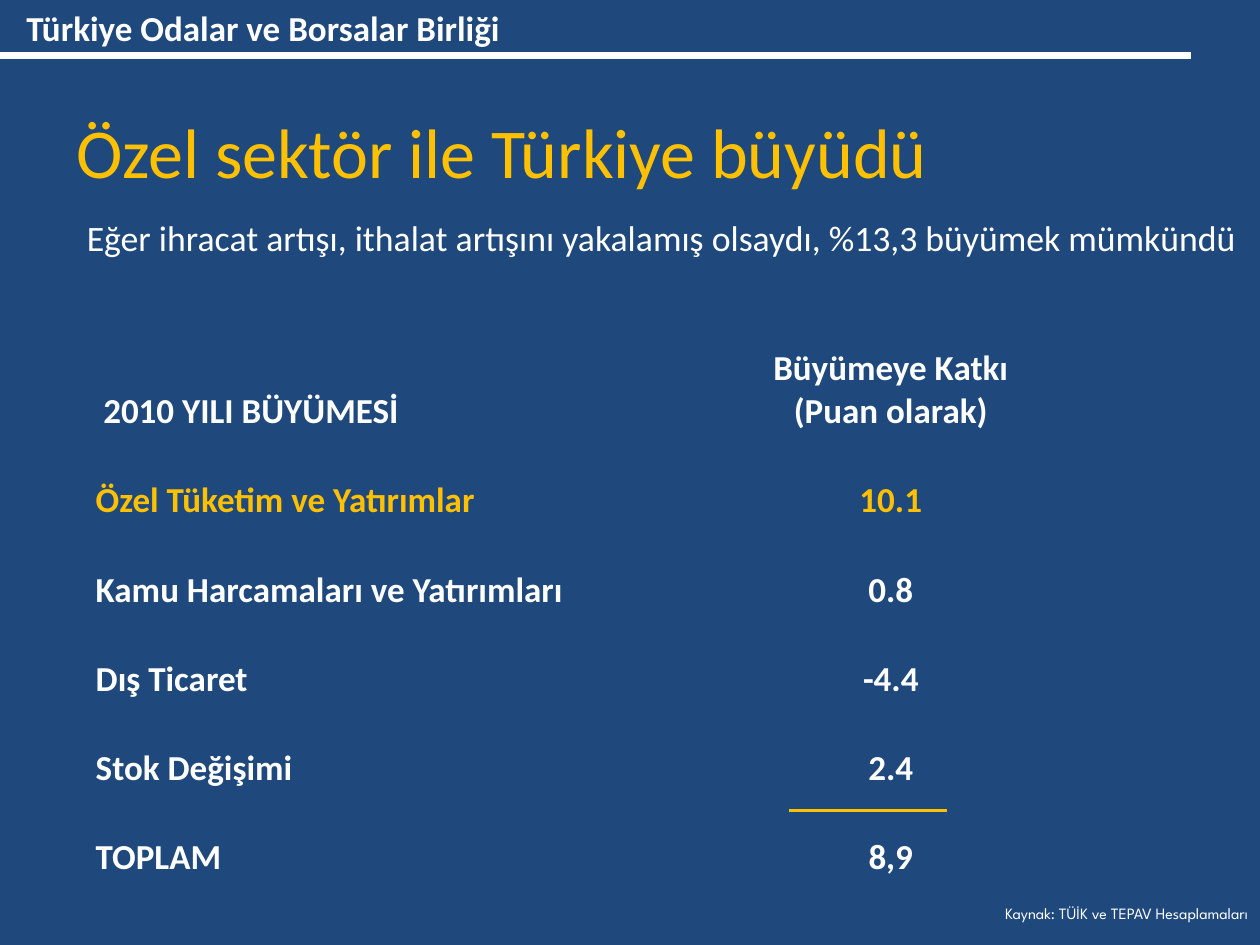
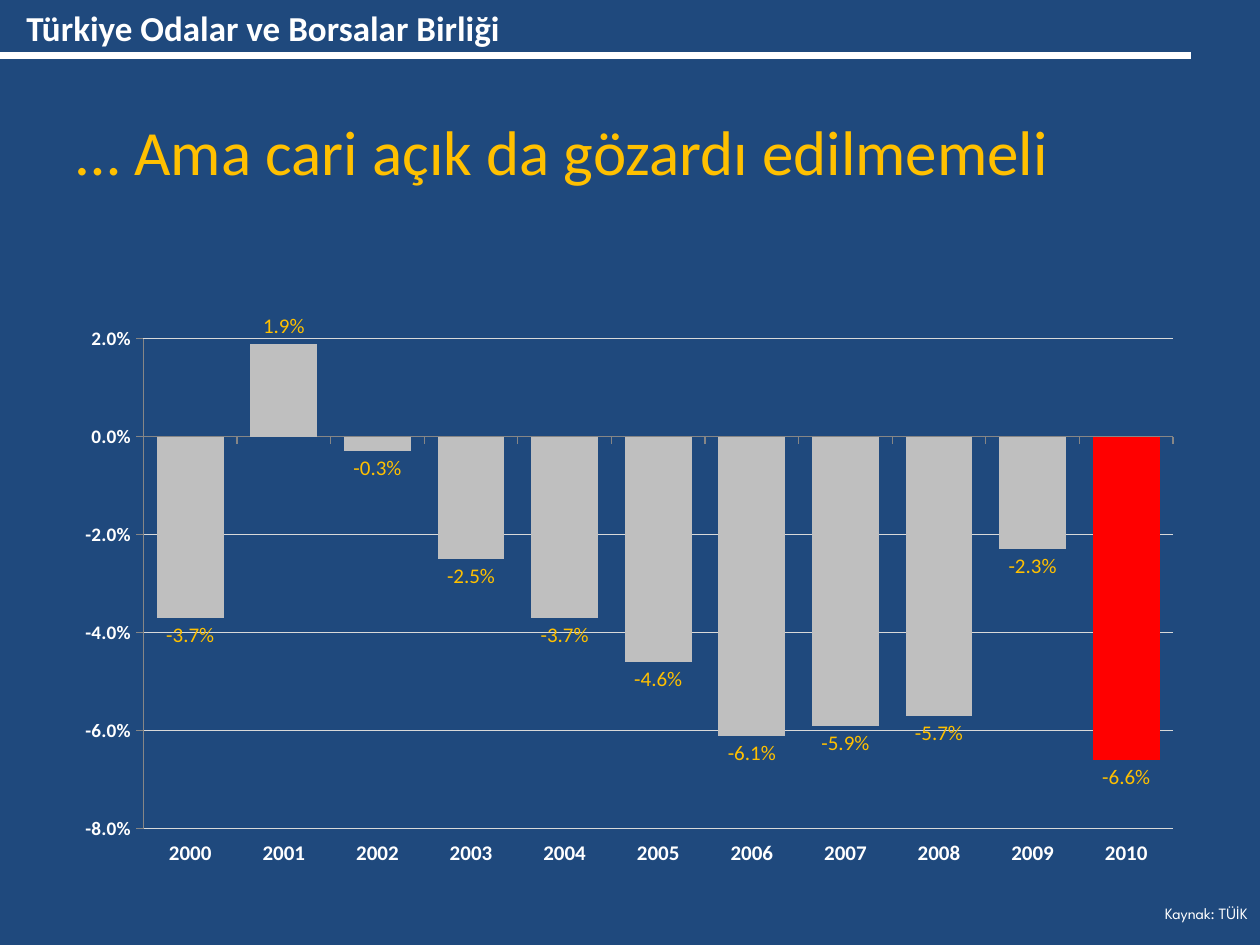
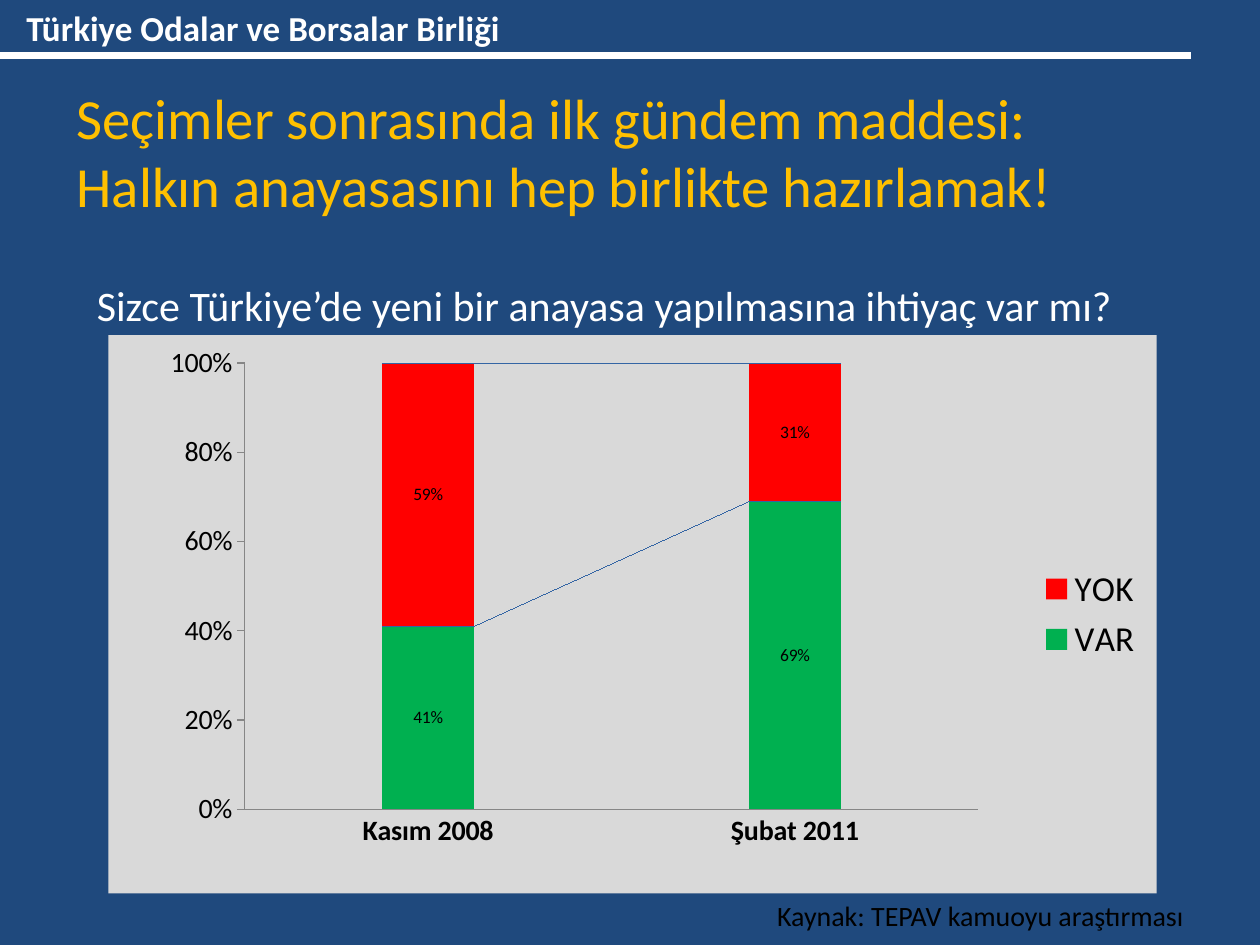
from dataclasses import dataclass

from lxml.etree import SubElement
from pptx import Presentation
from pptx.chart.data import CategoryChartData
from pptx.dml.color import RGBColor
from pptx.enum.chart import (XL_CHART_TYPE, XL_LABEL_POSITION, XL_LEGEND_POSITION,
                             XL_TICK_LABEL_POSITION, XL_TICK_MARK)
from pptx.enum.shapes import MSO_CONNECTOR
from pptx.enum.text import MSO_ANCHOR, PP_ALIGN
from pptx.oxml import parse_xml
from pptx.oxml.ns import nsdecls, qn
from pptx.util import Inches, Pt


@dataclass(frozen=True)
class Theme:
    """Colours, fonts and type sizes shared by the slides."""
    navy: str = "1F497D"
    white: str = "FFFFFF"
    black: str = "000000"
    gold: str = "FFC000"
    red: str = "FF0000"
    green: str = "00B050"
    bar_grey: str = "BFBFBF"
    light_grey: str = "D9D9D9"
    axis_grey: str = "868686"
    link_blue: str = "4A7EBB"
    body_font: str = "Calibri"
    source_font: str = "League Spartan"
    title_size: float = 40
    body_size: float = 20
    axis_size: float = 16
    source_size: float = 9


THEME = Theme()
NO_GRID_STYLE = "{2D5ABB26-0587-4C30-8999-92F81FD0307C}"


def colour(value):
    """Turn a hex string into a colour."""
    return RGBColor.from_string(value)


def style_font(font, size, color, bold=False, name=THEME.body_font):
    """Apply one type style to a font."""
    font.name, font.size, font.bold = name, Pt(size), bold
    font.color.rgb = colour(color)


def fill_frame(frame, text, align=PP_ALIGN.LEFT, line_spacing=None, **style):
    """Write text into a frame with one format."""
    para = frame.paragraphs[0]
    para.text = text
    para.alignment = align
    if line_spacing:
        para.line_spacing = line_spacing
    for span in para.runs:
        style_font(span.font, **style)


def add_text(page, text, left, top, width, height, anchor=MSO_ANCHOR.TOP,
             inset=0.1, **style):
    """Add a wrapping text box."""
    box = page.shapes.add_textbox(Inches(left), Inches(top), Inches(width), Inches(height))
    frame = box.text_frame
    frame.word_wrap = True
    frame.vertical_anchor = anchor
    frame.margin_left = Inches(inset)
    fill_frame(frame, text, **style)


def add_rule(page, left, right, top, color, weight):
    """Add a horizontal line without a shadow."""
    rule = page.shapes.add_connector(MSO_CONNECTOR.STRAIGHT, Inches(left), Inches(top),
                                     Inches(right), Inches(top))
    rule.line.color.rgb = colour(color)
    rule.line.width = Pt(weight)
    SubElement(rule._element.spPr, qn("a:effectLst"))


def add_page(deck, title, title_size=THEME.title_size):
    """Add a slide with the shared background, header and title."""
    page = deck.slides.add_slide(deck.slide_layouts[6])
    page.background.fill.solid()
    page.background.fill.fore_color.rgb = colour(THEME.navy)
    add_rule(page, 0, 9.45, 0.44, THEME.white, 4)
    add_text(page, "Türkiye Odalar ve Borsalar Birliği", 0, 0, 4.69, 0.44, inset=0.21,
             size=THEME.body_size, color=THEME.white, bold=True)
    add_text(page, title, 0.51, 0.68, 9.29, 1.03, anchor=MSO_ANCHOR.MIDDLE,
             size=title_size, color=THEME.gold)
    return page


def add_source(page, text):
    """Add the small source line in the bottom right corner."""
    add_text(page, text, 7.55, 7.12, 2.45, 0.25, anchor=MSO_ANCHOR.MIDDLE,
             align=PP_ALIGN.RIGHT, size=THEME.source_size, color=THEME.white,
             name=THEME.source_font)


def add_growth_table(page, rows, highlight):
    """Add the table of growth contributions."""
    table = page.shapes.add_table(len(rows), 2, Inches(0.75), Inches(2.73),
                                  Inches(7.64), Inches(4.25)).table
    table.first_row = table.horz_banding = False
    table._tbl.tblPr.find(qn("a:tableStyleId")).text = NO_GRID_STYLE
    for column, width in zip(table.columns, (5, 2.64)):
        column.width = Inches(width)
    for row_index, values in enumerate(rows):
        for column_index, text in enumerate(values):
            cell = table.cell(row_index, column_index)
            cell.fill.background()
            cell.vertical_anchor = MSO_ANCHOR.BOTTOM
            cell.margin_left = cell.margin_right = cell.margin_top = Inches(0.01)
            cell.margin_bottom = 0
            fill_frame(cell.text_frame, text,
                       align=PP_ALIGN.CENTER if column_index else PP_ALIGN.LEFT,
                       size=THEME.body_size, bold=True,
                       color=THEME.gold if row_index == highlight else THEME.white)
    table.cell(0, 0).margin_left = Inches(0.07)


def add_column_chart(page, kind, frame, categories, series, layout, gap, number_format):
    """Add a column chart with a fixed inner plot area."""
    data = CategoryChartData(number_format=number_format)
    data.categories = categories
    for name, values, _ in series:
        data.add_series(name, values)
    chart = page.shapes.add_chart(kind, *map(Inches, frame), data).chart
    chart.has_title = chart.has_legend = False
    style_font(chart.font, 14, THEME.black)
    plot = chart.plots[0]
    plot.gap_width = gap
    plot.vary_by_categories = False
    for drawn, (_, _, color) in zip(plot.series, series):
        drawn.invert_if_negative = False
        paint(drawn, color)
    set_plot_layout(chart, layout)
    return chart


def paint(element, color):
    """Give a series or point a solid fill."""
    element.format.fill.solid()
    element.format.fill.fore_color.rgb = colour(color)


def set_plot_layout(chart, layout):
    """Place the inner plot area by fractions of the chart."""
    area = chart._chartSpace.chart.plotArea
    for old in area.findall(qn("c:layout")):
        area.remove(old)
    holder = SubElement(area, qn("c:layout"))
    area.insert(0, holder)
    manual = SubElement(holder, qn("c:manualLayout"))
    settings = [("layoutTarget", "inner"), ("xMode", "edge"), ("yMode", "edge"),
                *zip("xywh", layout)]
    for tag, value in settings:
        SubElement(manual, qn(f"c:{tag}")).set("val", str(value))


def style_axis(axis, size, color, bold=False, tick=XL_TICK_MARK.OUTSIDE):
    """Format the line, ticks and labels of an axis."""
    axis.has_major_gridlines = False
    axis.major_tick_mark = tick
    axis.format.line.color.rgb = colour(THEME.axis_grey)
    style_font(axis.tick_labels.font, size, color, bold)


def scale_axis(axis, low, high, step, number_format):
    """Set the range and number format of a value axis."""
    axis.minimum_scale, axis.maximum_scale, axis.major_unit = low, high, step
    axis.tick_labels.number_format = number_format
    axis.tick_labels.number_format_is_linked = False


def show_labels(plot, position, number_format, size, color):
    """Show the values on the columns."""
    plot.has_data_labels = True
    labels = plot.data_labels
    labels.show_value = True
    labels.position = position
    labels.number_format = number_format
    labels.number_format_is_linked = False
    style_font(labels.font, size, color)


def add_series_lines(plot):
    """Join the stacked series with thin lines."""
    lines = parse_xml(
        f'<c:serLines {nsdecls("c", "a")}><c:spPr><a:ln w="6350"><a:solidFill>'
        f'<a:srgbClr val="{THEME.link_blue}"/></a:solidFill></a:ln></c:spPr></c:serLines>')
    plot._element.find(qn("c:overlap")).addnext(lines)


def fill_chart(chart, color):
    """Fill the whole chart area."""
    area = parse_xml(
        f'<c:spPr {nsdecls("c", "a")}><a:solidFill><a:srgbClr val="{color}"/>'
        '</a:solidFill><a:ln><a:noFill/></a:ln></c:spPr>')
    chart._chartSpace.chart.addnext(area)


def build_growth(deck):
    """Build the slide on contributions to growth."""
    page = add_page(deck, "Özel sektör ile Türkiye büyüdü")
    add_text(page, "Eğer ihracat artışı, ithalat artışını yakalamış olsaydı, "
             "%13,3 büyümek mümkündü", 0.59, 1.7, 9.41, 0.62, line_spacing=0.9,
             size=20.4, color=THEME.white)
    add_source(page, "Kaynak: TÜİK ve TEPAV Hesaplamaları")
    add_growth_table(page, [
        ("2010 YILI BÜYÜMESİ", "Büyümeye Katkı\n(Puan olarak)"),
        ("Özel Tüketim ve Yatırımlar", "10.1"),
        ("Kamu Harcamaları ve Yatırımları", "0.8"),
        ("Dış Ticaret", "-4.4"),
        ("Stok Değişimi", "2.4"),
        ("TOPLAM", "8,9"),
    ], highlight=1)
    add_rule(page, 6.26, 7.52, 6.43, THEME.gold, 1.75)


def build_deficit(deck):
    """Build the slide on the current account deficit."""
    page = add_page(deck, "… Ama cari açık da gözardı edilmemeli", title_size=36)
    balances = (-0.037, 0.019, -0.003, -0.025, -0.037, -0.046,
                -0.061, -0.059, -0.057, -0.023, -0.066)
    chart = add_column_chart(
        page, XL_CHART_TYPE.COLUMN_CLUSTERED, (0.51, 2.49, 8.98, 4.49),
        [str(year) for year in range(2000, 2011)],
        [("Series 1", balances, THEME.bar_grey)],
        layout=(0.07, 0.04, 0.91, 0.87), gap=40, number_format="0.0%")
    paint(chart.plots[0].series[0].points[10], THEME.red)
    style_axis(chart.category_axis, 12, THEME.white, bold=True)
    chart.category_axis.tick_label_position = XL_TICK_LABEL_POSITION.LOW
    value_axis = chart.value_axis
    style_axis(value_axis, 11, THEME.white, bold=True)
    scale_axis(value_axis, -0.08, 0.02, 0.02, "0.0%")
    value_axis.has_major_gridlines = True
    grid = value_axis.major_gridlines.format.line
    grid.color.rgb = colour(THEME.light_grey)
    grid.width = Pt(0.25)
    show_labels(chart.plots[0], XL_LABEL_POSITION.OUTSIDE_END, "0.0%", 12, THEME.gold)
    add_source(page, "Kaynak: TÜİK")


def build_constitution(deck):
    """Build the slide on the constitution survey."""
    page = add_page(deck, "Seçimler sonrasında ilk gündem maddesi:\n"
                    "Halkın anayasasını hep birlikte hazırlamak!", title_size=32.4)
    add_text(page, "Sizce Türkiye’de yeni bir anayasa yapılmasına ihtiyaç var mı?",
             0.67, 2.17, 8.41, 0.5, size=24, color=THEME.white)
    chart = add_column_chart(
        page, XL_CHART_TYPE.COLUMN_STACKED_100, (0.86, 2.66, 8.32, 4.43),
        ["Kasım 2008", "Şubat 2011"],
        [("VAR", (0.41, 0.69), THEME.green), ("YOK", (0.59, 0.31), THEME.red)],
        layout=(0.13, 0.05, 0.7, 0.8), gap=300, number_format="0%")
    plot = chart.plots[0]
    plot.overlap = 100
    add_series_lines(plot)
    fill_chart(chart, THEME.light_grey)
    style_axis(chart.category_axis, THEME.axis_size, THEME.black, bold=True,
               tick=XL_TICK_MARK.NONE)
    style_axis(chart.value_axis, THEME.axis_size, THEME.black)
    scale_axis(chart.value_axis, 0, 1, 0.2, "0%")
    show_labels(plot, XL_LABEL_POSITION.CENTER, "0%", 10, THEME.black)
    chart.has_legend = True
    chart.legend.position = XL_LEGEND_POSITION.RIGHT
    chart.legend.include_in_layout = False
    style_font(chart.legend.font, THEME.body_size, THEME.black)
    add_text(page, "Kaynak: TEPAV kamuoyu araştırması", 6.07, 7.08, 3.93, 0.37,
             size=THEME.axis_size, color=THEME.black)


def main():
    """Build and save the deck."""
    deck = Presentation()
    deck.slide_width, deck.slide_height = Inches(10), Inches(7.5)
    build_growth(deck)
    build_deficit(deck)
    build_constitution(deck)
    deck.save("out.pptx")


if __name__ == "__main__":
    main()
